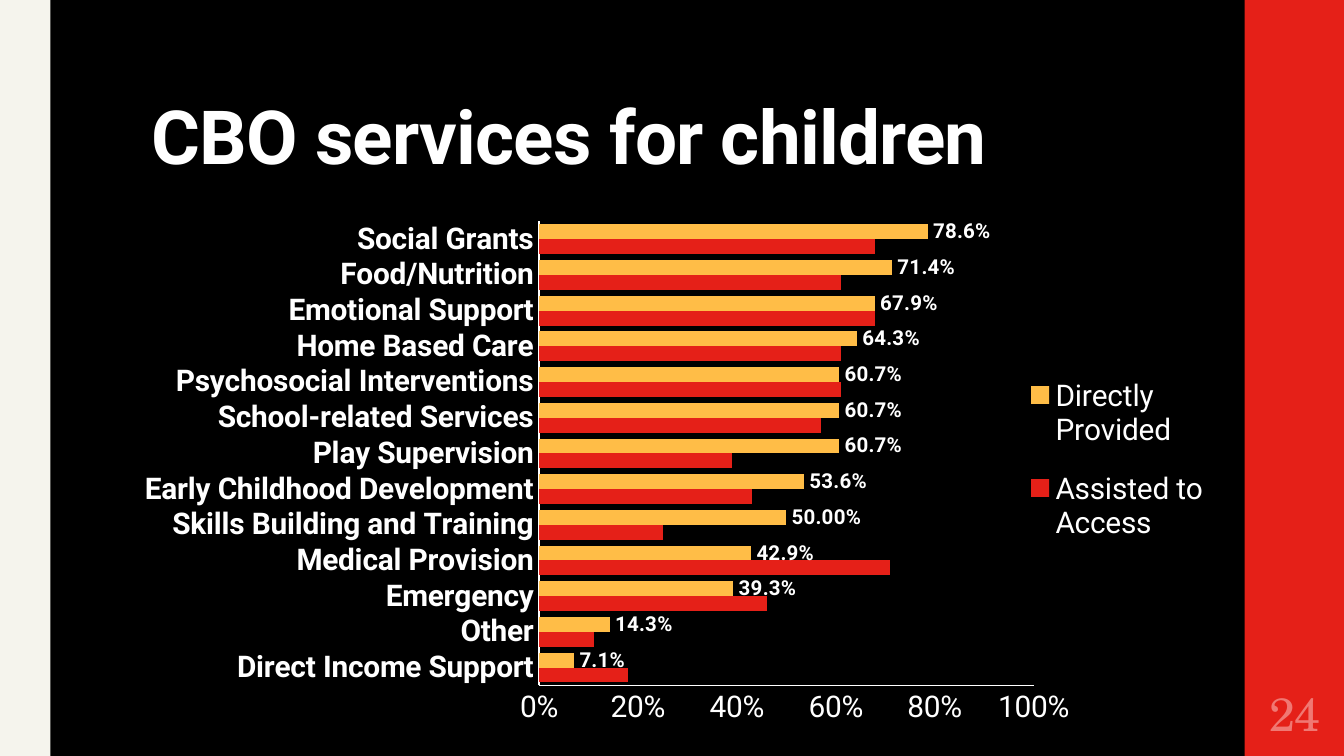
from dataclasses import dataclass
from typing import NamedTuple

from lxml import etree
from pptx import Presentation
from pptx.chart.data import CategoryChartData
from pptx.dml.color import RGBColor
from pptx.enum.chart import XL_CHART_TYPE, XL_LABEL_POSITION, XL_LEGEND_POSITION, XL_TICK_MARK
from pptx.enum.shapes import MSO_SHAPE
from pptx.enum.text import MSO_ANCHOR, PP_ALIGN
from pptx.oxml.ns import qn
from pptx.util import Pt

BAR = XL_CHART_TYPE.BAR_CLUSTERED
OUTSIDE = XL_LABEL_POSITION.OUTSIDE_END
RIGHT_SIDE = XL_LEGEND_POSITION.RIGHT
NO_TICK = XL_TICK_MARK.NONE
RECTANGLE = MSO_SHAPE.RECTANGLE
BOTTOM, MIDDLE = MSO_ANCHOR.BOTTOM, MSO_ANCHOR.MIDDLE
LEFT, CENTER = PP_ALIGN.LEFT, PP_ALIGN.CENTER


@dataclass(frozen=True)
class Theme:
    black: str = "000000"
    white: str = "FFFFFF"
    cream: str = "F5F4ED"
    red: str = "E52018"
    amber: str = "FFBD47"
    pink: str = "F07873"
    sans: str = "Roboto"
    serif: str = "TeX Gyre Schola"
    title: float = 40
    number: float = 25
    axis: float = 16
    label: float = 11


class Frame(NamedTuple):
    left: float
    top: float
    width: float
    height: float

    def points(self) -> tuple:
        return tuple(Pt(value) for value in self)


class Strip(NamedTuple):
    frame: Frame
    color: str


class Service(NamedTuple):
    name: str
    assisted: float
    direct: float


THEME = Theme()
STRIPS = [
    Strip(Frame(666.7, 0, 54, 405), THEME.red),
    Strip(Frame(0, 0, 27, 405), THEME.cream),
]
SERVICES = [
    Service("Direct Income Support", 0.18, 0.071),
    Service("Other", 0.11, 0.143),
    Service("Emergency", 0.46, 0.393),
    Service("Medical Provision", 0.71, 0.429),
    Service("Skills Building and Training", 0.25, 0.5),
    Service("Early Childhood Development", 0.43, 0.536),
    Service("Play Supervision", 0.39, 0.607),
    Service("School-related Services", 0.57, 0.607),
    Service("Psychosocial Interventions", 0.61, 0.607),
    Service("Home Based Care", 0.61, 0.643),
    Service("Emotional Support", 0.68, 0.679),
    Service("Food/Nutrition", 0.61, 0.714),
    Service("Social Grants", 0.68, 0.786),
]


def rgb(color: str) -> RGBColor:
    return RGBColor.from_string(color)


def style_font(font, size: float, color: str = THEME.white, name: str = THEME.sans,
               bold: bool = False) -> None:
    font.size, font.name, font.bold = Pt(size), name, bold
    font.color.rgb = rgb(color)


def draw_strip(page, strip: Strip) -> None:
    shape = page.shapes.add_shape(RECTANGLE, *strip.frame.points())
    shape.shadow.inherit = False
    shape.fill.solid()
    shape.fill.fore_color.rgb = rgb(strip.color)
    shape.line.fill.background()


def draw_text(page, frame: Frame, text: str, *, margins: Frame, anchor, align,
              line_spacing: float = 1.0, tracking: float = 0, **font_format) -> None:
    box = page.shapes.add_textbox(*frame.points())
    body = box.text_frame
    body.word_wrap = True
    body.vertical_anchor = anchor
    body.margin_left, body.margin_top, body.margin_right, body.margin_bottom = margins.points()
    para = body.paragraphs[0]
    para.alignment = align
    para.line_spacing = line_spacing
    span = para.add_run()
    span.text = text
    style_font(span.font, **font_format)
    if tracking:
        for properties in box.element.iter(qn("a:rPr")):
            properties.set("spc", str(round(tracking * 100)))


def place_part(part, index: int, area: Frame, inner: bool = False) -> None:
    for old in part.findall(qn("c:layout")):
        part.remove(old)
    layout = etree.Element(qn("c:layout"))
    manual = etree.SubElement(layout, qn("c:manualLayout"))
    settings = [("layoutTarget", "inner")] if inner else []
    settings += [("xMode", "edge"), ("yMode", "edge"), *zip("xywh", area)]
    for tag, value in settings:
        etree.SubElement(manual, qn(f"c:{tag}")).set("val", str(value))
    part.insert(index, layout)


def style_axis(axis, bold: bool) -> None:
    axis.has_major_gridlines = False
    axis.major_tick_mark = axis.minor_tick_mark = NO_TICK
    axis.format.line.color.rgb = rgb(THEME.white)
    axis.format.line.width = Pt(0.75)
    style_font(axis.tick_labels.font, THEME.axis, bold=bold)


def draw_chart(page, frame: Frame, services: list[Service]) -> None:
    data = CategoryChartData()
    data.categories = [service.name for service in services]
    data.add_series("Assisted to Access", [service.assisted for service in services])
    data.add_series("Directly Provided", [service.direct for service in services])
    chart = page.shapes.add_chart(BAR, *frame.points(), data).chart
    chart.has_title = False
    style_font(chart.font, 10, name=THEME.serif)

    plot = chart.plots[0]
    plot.gap_width = 40
    plot.vary_by_categories = False
    for series, color in zip(plot.series, (THEME.red, THEME.amber)):
        series.format.fill.solid()
        series.format.fill.fore_color.rgb = rgb(color)

    direct = plot.series[1]
    labels = direct.data_labels
    labels.show_value = True
    labels.number_format, labels.number_format_is_linked = "0.0%", False
    labels.position = OUTSIDE
    style_font(labels.font, THEME.label, bold=True)
    training = [service.name for service in services].index("Skills Building and Training")
    label = direct.points[training].data_label
    span = label.text_frame.paragraphs[0].add_run()
    span.text = "50.00%"
    style_font(span.font, THEME.label, bold=True)
    label.position = OUTSIDE

    style_axis(chart.category_axis, bold=True)
    values = chart.value_axis
    style_axis(values, bold=False)
    values.minimum_scale, values.maximum_scale, values.major_unit = 0, 1, 0.2
    values.tick_labels.number_format = "0%"
    values.tick_labels.number_format_is_linked = False

    chart.has_legend = True
    chart.legend.position = RIGHT_SIDE
    chart.legend.include_in_layout = False
    style_font(chart.legend.font, THEME.axis)
    place_part(chart.element.find(".//" + qn("c:plotArea")), 0,
               Frame(0.428, 0.072, 0.374, 0.832), inner=True)
    place_part(chart.element.find(".//" + qn("c:legend")), 1, Frame(0.79, 0.31, 0.15, 0.38))


def main() -> None:
    """Build the slide on children's services and save it."""
    deck = Presentation()
    deck.slide_width, deck.slide_height = Pt(720), Pt(405)
    page = deck.slides.add_slide(deck.slide_layouts[6])
    page.background.fill.solid()
    page.background.fill.fore_color.rgb = rgb(THEME.black)
    for strip in STRIPS:
        draw_strip(page, strip)
    draw_text(page, Frame(74.2, 17.3, 572.4, 82.8), "CBO services for children",
              margins=Frame(7.2, 2.2, 7.2, 3.6), anchor=BOTTOM, align=LEFT, line_spacing=0.9,
              tracking=-0.4, size=THEME.title, bold=True)
    draw_text(page, Frame(666.7, 364.3, 54, 35.3), "24", margins=Frame(3.6, 3.6, 3.6, 3.6),
              anchor=MIDDLE, align=CENTER, size=THEME.number, color=THEME.pink, name=THEME.serif)
    draw_chart(page, Frame(-14.4, 97.2, 708.5, 298.8), SERVICES)
    deck.save("out.pptx")


if __name__ == "__main__":
    main()
